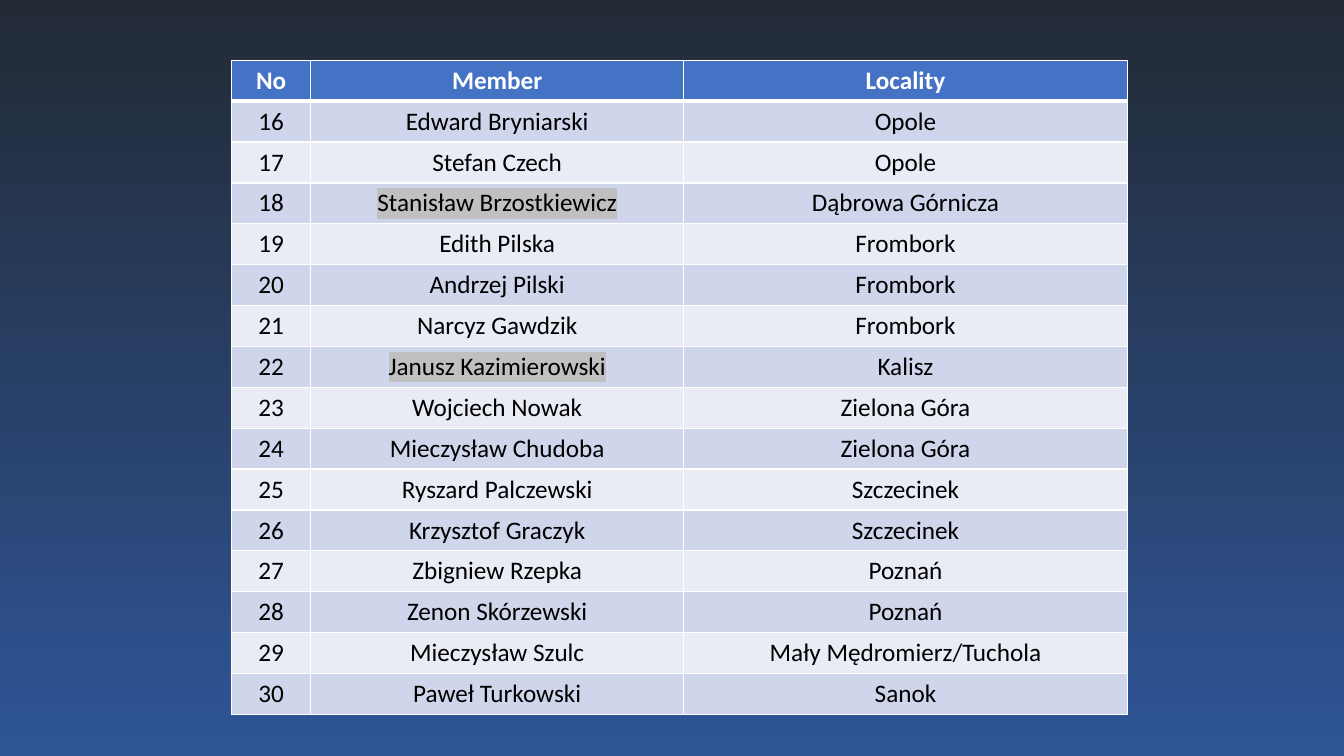
from lxml.etree import SubElement
from pptx import Presentation
from pptx.dml.color import RGBColor
from pptx.enum.text import PP_ALIGN
from pptx.oxml.ns import qn
from pptx.util import Cm, Pt

HEADER = ("No", "Member", "Locality")
FIRST_NUMBER = 16
MEMBERS = [
    ("Edward Bryniarski", "Opole"),
    ("Stefan Czech", "Opole"),
    ("Stanisław Brzostkiewicz", "Dąbrowa Górnicza"),
    ("Edith Pilska", "Frombork"),
    ("Andrzej Pilski", "Frombork"),
    ("Narcyz Gawdzik", "Frombork"),
    ("Janusz Kazimierowski", "Kalisz"),
    ("Wojciech Nowak", "Zielona Góra"),
    ("Mieczysław Chudoba", "Zielona Góra"),
    ("Ryszard Palczewski", "Szczecinek"),
    ("Krzysztof Graczyk", "Szczecinek"),
    ("Zbigniew Rzepka", "Poznań"),
    ("Zenon Skórzewski", "Poznań"),
    ("Mieczysław Szulc", "Mały Mędromierz/Tuchola"),
    ("Paweł Turkowski", "Sanok"),
]
HIGHLIGHTED = {"Stanisław Brzostkiewicz", "Janusz Kazimierowski"}
BACKGROUND = ("222A35", "2F5597")
HEADER_FILL, BANDS = "4472C4", ("E9EBF5", "CFD5EA")
WHITE, BLACK, GREY = "FFFFFF", "000000", "C0C0C0"
LEFT, TOP, ROW_HEIGHT = 5.84, 1.52, 1.03
COLUMN_WIDTHS = (1.99, 9.4, 11.18)


def color(value):
    """Turn a hex string into a colour."""
    return RGBColor.from_string(value)


def set_borders(cell, widths):
    """Draw white cell borders with the given widths in points."""
    properties = cell._tc.get_or_add_tcPr()
    for side, width in widths.items():
        line = SubElement(properties, qn(f"a:ln{side}"), w=str(Pt(width)))
        fill = SubElement(line, qn("a:solidFill"))
        SubElement(fill, qn("a:srgbClr"), val=WHITE)


def fill_cell(cell, text, row):
    """Write and style one cell of the member table."""
    is_header = row == 0
    set_borders(cell, {"L": 1, "R": 1, "T": 3 if row == 1 else 1, "B": 3 if is_header else 1})
    cell.fill.solid()
    cell.fill.fore_color.rgb = color(HEADER_FILL if is_header else BANDS[row % 2])
    paragraph = cell.text_frame.paragraphs[0]
    paragraph.alignment = PP_ALIGN.CENTER
    run = paragraph.add_run()
    run.text = text
    font = paragraph.font
    font.name, font.size, font.bold = "Calibri", Pt(18), is_header
    font.color.rgb = color(WHITE if is_header else BLACK)
    if text in HIGHLIGHTED:
        highlight = SubElement(run._r.get_or_add_rPr(), qn("a:highlight"))
        SubElement(highlight, qn("a:srgbClr"), val=GREY)


def main():
    """Build the member list slide."""
    presentation = Presentation()
    presentation.slide_width, presentation.slide_height = Cm(33.87), Cm(19.05)
    slide = presentation.slides.add_slide(presentation.slide_layouts[6])

    background = slide.background.fill
    background.gradient()
    background.gradient_angle = 270
    for stop, value in zip(background.gradient_stops, BACKGROUND):
        stop.color.rgb = color(value)

    rows = [HEADER] + [
        (str(number), *member) for number, member in enumerate(MEMBERS, FIRST_NUMBER)
    ]
    table = slide.shapes.add_table(
        len(rows), len(HEADER), Cm(LEFT), Cm(TOP),
        Cm(sum(COLUMN_WIDTHS)), Cm(ROW_HEIGHT * len(rows)),
    ).table
    for column, width in zip(table.columns, COLUMN_WIDTHS):
        column.width = Cm(width)
    for row, texts in enumerate(rows):
        table.rows[row].height = Cm(ROW_HEIGHT)
        for column, text in enumerate(texts):
            fill_cell(table.cell(row, column), text, row)

    presentation.save("out.pptx")


if __name__ == "__main__":
    main()
